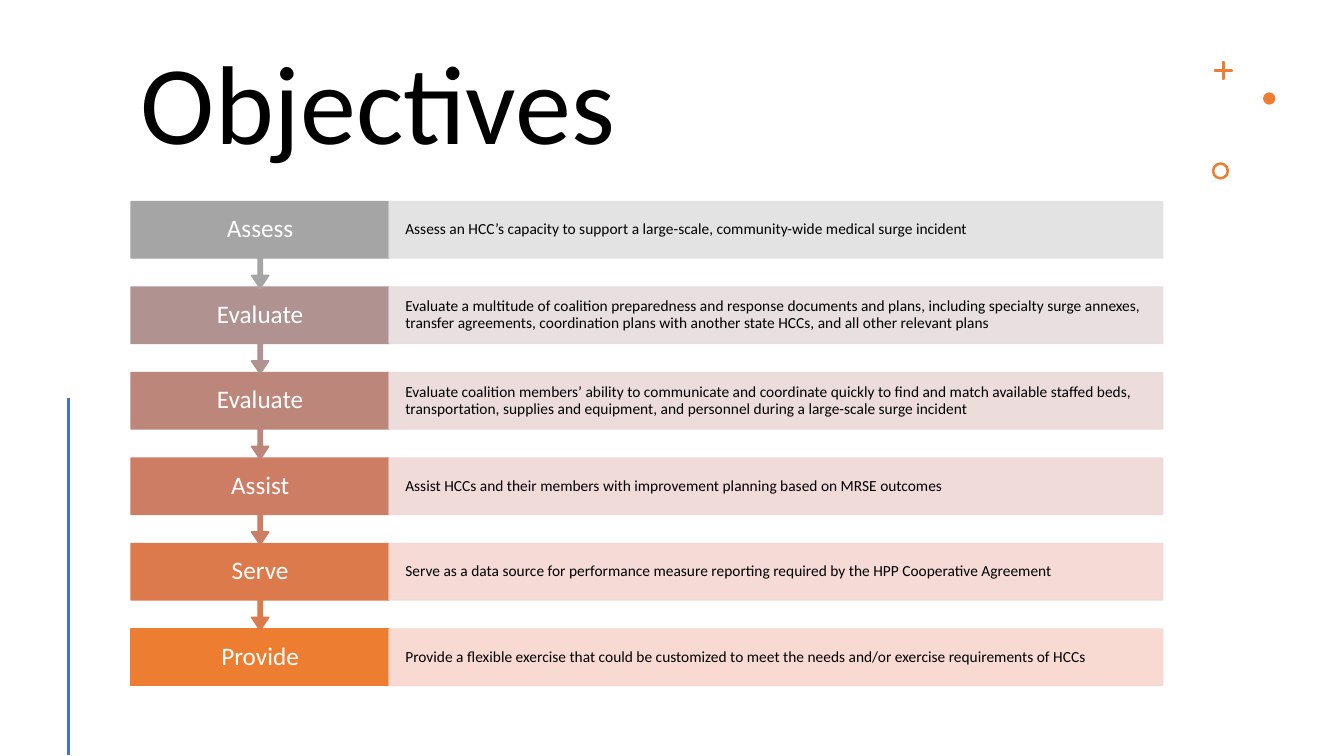
from lxml.etree import SubElement
from pptx import Presentation
from pptx.dml.color import RGBColor
from pptx.enum.shapes import MSO_CONNECTOR as Connector, MSO_SHAPE as Shape
from pptx.enum.text import MSO_ANCHOR as Anchor, PP_ALIGN as Align
from pptx.oxml.ns import qn
from pptx.util import Pt

TITLE = "Objectives"
OBJECTIVES = [
    ("Assess", "Assess an HCC’s capacity to support a large-scale, community-wide medical surge incident",
     "A5A5A5", "E1E1E1"),
    ("Evaluate", "Evaluate a multitude of coalition preparedness and response documents and plans, including "
     "specialty surge annexes, transfer agreements, coordination plans with another state HCCs, and all "
     "other relevant plans", "B09391", "E6DDDD"),
    ("Evaluate", "Evaluate coalition members’ ability to communicate and coordinate quickly to find and match "
     "available staffed beds, transportation, supplies and equipment, and personnel during a large-scale "
     "surge incident", "BD867B", "EADAD9"),
    ("Assist", "Assist HCCs and their members with improvement planning based on MRSE outcomes",
     "CC7D64", "EFD8D5"),
    ("Serve", "Serve as a data source for performance measure reporting required by the HPP Cooperative Agreement",
     "DC7A4B", "F4D7D1"),
    ("Provide", "Provide a flexible exercise that could be customized to meet the needs and/or exercise "
     "requirements of HCCs", "ED7D31", "F8D7CE"),
]
COLORS = {"text": "000000", "label": "FFFFFF", "accent": "ED7D31", "rule": "4472C4"}
FONT = "Calibri"

LEFT, TOP, PITCH = 93.6, 144, 61.06
LABEL_WIDTH, DETAIL_WIDTH = 184.4, 552.5
ROW_HEIGHT, CALLOUT_HEIGHT = 40.3, 62
CALLOUT_ADJUSTMENTS = (0.05, 0.1, 0.15, 0.65)
DETAIL_OPACITY = 90

PLUS_CENTER, PLUS_SIZE, PLUS_STROKE = (873.9, 50.4), 13.6, 2
DOT = (902.2, 66, 8.8, 8.8)
RING = (865.6, 115.9, 12.4, 12.4)
RING_STROKE = 0.15


def add_shape(page, kind, bounds, color, outlined=False, opacity=100):
    shape = page.shapes.add_shape(kind, *map(Pt, bounds))
    shape.shadow.inherit = False
    fills = [shape.fill]
    if outlined:
        shape.line.width = Pt(1)
        fills.append(shape.line.fill)
    else:
        shape.line.fill.background()
    for fill in fills:
        fill.solid()
        fill.fore_color.rgb = RGBColor.from_string(color)
    if opacity < 100:
        for node in shape.element.spPr.iter(qn("a:srgbClr")):
            SubElement(node, qn("a:alpha"), val=str(opacity * 1000))
    return shape


def write(shape, text, size, color, margins, align=Align.LEFT):
    frame = shape.text_frame
    frame.word_wrap = True
    frame.vertical_anchor = Anchor.MIDDLE
    frame.margin_left = frame.margin_right = Pt(margins[0])
    frame.margin_top = frame.margin_bottom = Pt(margins[1])
    frame.text = text
    para = frame.paragraphs[0]
    para.alignment = align
    para.line_spacing = 0.9
    font = para.runs[0].font
    font.name = FONT
    font.size = Pt(size)
    font.color.rgb = RGBColor.from_string(color)


def add_text(page, bounds, *style):
    write(page.shapes.add_textbox(*map(Pt, bounds)), *style)


def add_objective(page, index, label, detail, strong, pale):
    top = TOP + index * PITCH
    label_bounds = (LEFT, top, LABEL_WIDTH, ROW_HEIGHT)
    if index == len(OBJECTIVES) - 1:
        add_shape(page, Shape.RECTANGLE, label_bounds, strong, outlined=True)
    else:
        callout = add_shape(page, Shape.UP_ARROW_CALLOUT, (LEFT, top, LABEL_WIDTH, CALLOUT_HEIGHT),
                            strong, outlined=True)
        callout.rotation = 180
        for position, value in enumerate(CALLOUT_ADJUSTMENTS):
            callout.adjustments[position] = value
    add_text(page, label_bounds, label, 18, COLORS["label"], (13, 10), Align.CENTER)
    panel = add_shape(page, Shape.RECTANGLE, (LEFT + LABEL_WIDTH, top, DETAIL_WIDTH, ROW_HEIGHT),
                      pale, outlined=True, opacity=DETAIL_OPACITY)
    write(panel, detail, 11, COLORS["text"], (11.5, 10.8))


def add_ornaments(page):
    x, y = PLUS_CENTER
    for width, height in ((PLUS_SIZE, PLUS_STROKE), (PLUS_STROKE, PLUS_SIZE)):
        bar = add_shape(page, Shape.ROUNDED_RECTANGLE,
                        (x - width / 2, y - height / 2, width, height), COLORS["accent"])
        bar.adjustments[0] = 0.5
    add_shape(page, Shape.OVAL, DOT, COLORS["accent"])
    ring = add_shape(page, Shape.DONUT, RING, COLORS["accent"])
    ring.adjustments[0] = RING_STROKE
    rule = page.shapes.add_connector(Connector.STRAIGHT, Pt(49), Pt(284), Pt(49), Pt(539.5))
    rule.line.width = Pt(2)
    rule.line.color.rgb = RGBColor.from_string(COLORS["rule"])
    SubElement(rule.element.spPr, qn("a:effectLst"))


def main():
    deck = Presentation()
    deck.slide_width, deck.slide_height = Pt(960), Pt(540)
    page = deck.slides.add_slide(deck.slide_layouts[6])
    add_text(page, (LEFT, 30.2, LABEL_WIDTH + DETAIL_WIDTH, 94.3), TITLE, 80, COLORS["text"], (7.2, 3.6))
    add_ornaments(page)
    for index, objective in reversed(list(enumerate(OBJECTIVES))):
        add_objective(page, index, *objective)
    deck.save("out.pptx")


if __name__ == "__main__":
    main()
